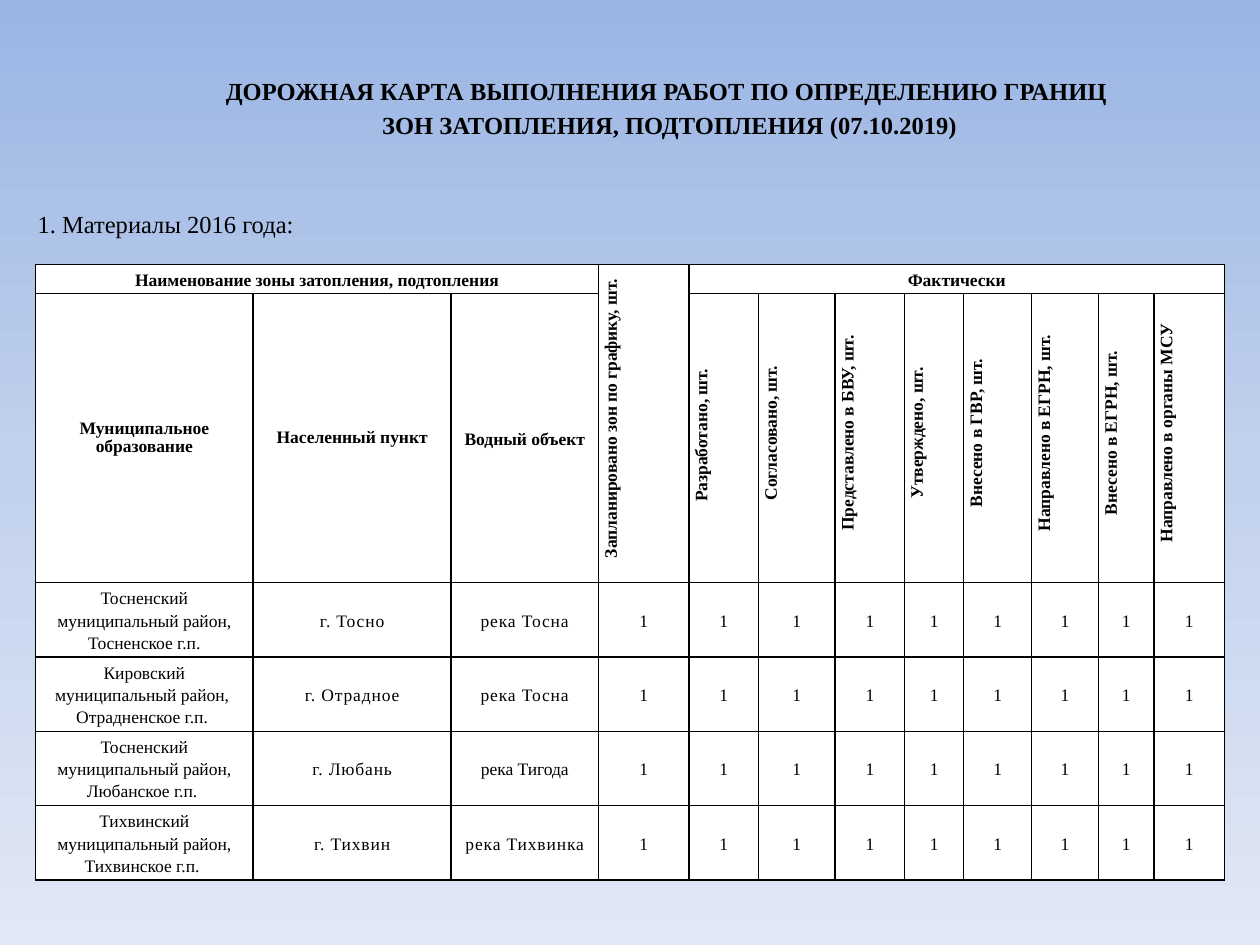
import copy
import dataclasses

import lxml.etree
import pptx
import pptx.dml.color
import pptx.enum.text
import pptx.oxml.ns
import pptx.util

Inches = pptx.util.Inches
Pt = pptx.util.Pt
qn = pptx.oxml.ns.qn
Align = pptx.enum.text.PP_ALIGN
Anchor = pptx.enum.text.MSO_ANCHOR


@dataclasses.dataclass(frozen=True)
class Theme:
    font: str = "Times New Roman"
    ink: str = "000000"
    paper: str = "FFFFFF"
    sky: tuple = ((0, "9AB5E4"), (50, "C2D1ED"), (100, "E1E8F5"))
    heading_size: float = 14
    table_size: float = 10
    border: float = 1
    spacing: float = 1.15
    tight_spacing: float = 0.92
    tracking: float = 0.5


class SlideBuilder:
    def __init__(self, slide, theme):
        self.slide = slide
        self.theme = theme

    def background(self):
        fill = self.slide.background.fill
        fill.gradient()
        fill.gradient_angle = 270
        stops = self.slide.element.find(".//" + qn("a:gsLst"))
        stops.insert(1, copy.deepcopy(stops[0]))
        for stop, (position, color) in zip(stops, self.theme.sky):
            stop.set("pos", str(position * 1000))
            for child in list(stop):
                stop.remove(child)
            lxml.etree.SubElement(stop, qn("a:srgbClr"), val=color)

    def style(self, para, size, bold, align, spacing):
        para.alignment = align
        para.line_spacing = spacing
        para.font.name = self.theme.font
        para.font.size = Pt(size)
        para.font.bold = bold
        para.font.color.rgb = pptx.dml.color.RGBColor.from_string(self.theme.ink)

    def text(self, left, top, width, height, text, bold=False,
             align=Align.LEFT, anchor=Anchor.TOP, spacing=1.0):
        box = self.slide.shapes.add_textbox(
            Inches(left), Inches(top), Inches(width), Inches(height))
        frame = box.text_frame
        frame.word_wrap = True
        frame.vertical_anchor = anchor
        para = frame.paragraphs[0]
        para.text = text
        self.style(para, self.theme.heading_size, bold, align, spacing)

    def table(self, left, top, widths, heights):
        frame = self.slide.shapes.add_table(
            len(heights), len(widths), Inches(left), Inches(top),
            Inches(sum(widths)), Inches(sum(heights)))
        table = frame.table
        table.first_row = False
        table.horz_banding = False
        for column, width in zip(table.columns, widths):
            column.width = Inches(width)
        for row, height in zip(table.rows, heights):
            row.height = Inches(height)
        for cell in table.iter_cells():
            self.cell_frame(cell)
        return table

    def cell_frame(self, cell):
        cell.margin_left = cell.margin_right = Inches(0.06)
        cell.margin_top = cell.margin_bottom = 0
        cell.vertical_anchor = Anchor.MIDDLE
        properties = cell._tc.get_or_add_tcPr()
        for side in ("a:lnL", "a:lnR", "a:lnT", "a:lnB"):
            line = lxml.etree.SubElement(
                properties, qn(side), w=str(Pt(self.theme.border)))
            solid = lxml.etree.SubElement(line, qn("a:solidFill"))
            lxml.etree.SubElement(solid, qn("a:srgbClr"), val=self.theme.ink)
        cell.fill.solid()
        cell.fill.fore_color.rgb = pptx.dml.color.RGBColor.from_string(self.theme.paper)

    def cell(self, cell, text, bold=False, spacing=None, vertical=False, tracked=False):
        cell.text = text
        if vertical:
            cell._tc.get_or_add_tcPr().set("vert", "vert270")
        for para in cell.text_frame.paragraphs:
            self.style(para, self.theme.table_size, bold, Align.CENTER,
                       spacing or self.theme.spacing)
            if vertical:
                para._p.get_or_add_pPr().set("marL", str(Inches(0.08)))
            if tracked:
                for span in para.runs:
                    span._r.get_or_add_rPr().set("spc", str(int(self.theme.tracking * 100)))


COLUMN_WIDTHS = [1.73, 1.57, 1.17, 0.72, 0.55, 0.61, 0.55, 0.47, 0.54, 0.53, 0.44, 0.56]
ROW_HEIGHTS = [0.23, 1.25] + [0.59] * 4
PLANNED_COLUMN = 3
STAGES = [
    "Разработано, шт. ", "Согласовано, шт.", "Представлено в БВУ, шт.",
    "Утверждено, шт.", "Внесено в ГВР, шт.", "Направлено в ЕГРН, шт.",
    "Внесено в ЕГРН, шт.", "Направлено в органы МСУ",
]
ZONES = [
    ("Тосненский муниципальный район, Тосненское г.п.", "г. Тосно", "река Тосна", True),
    ("Кировский муниципальный район, \nОтрадненское г.п. ", "г. Отрадное", "река Тосна", True),
    ("Тосненский муниципальный район,\nЛюбанское г.п. ", "г. Любань", "река Тигода", False),
    ("Тихвинский муниципальный район, Тихвинское г.п. ", "г. Тихвин", "река Тихвинка", True),
]


def fill_header(builder, table):
    last_column = len(COLUMN_WIDTHS) - 1
    first_stage = PLANNED_COLUMN + 1
    table.cell(0, 0).merge(table.cell(0, PLANNED_COLUMN - 1))
    table.cell(0, PLANNED_COLUMN).merge(table.cell(1, PLANNED_COLUMN))
    table.cell(0, first_stage).merge(table.cell(0, last_column))
    builder.cell(table.cell(0, 0), "Наименование зоны затопления, подтопления", bold=True)
    builder.cell(table.cell(0, PLANNED_COLUMN), "Запланировано зон по графику, шт.",
                 bold=True, vertical=True)
    builder.cell(table.cell(0, first_stage), "Фактически", bold=True)
    tight = builder.theme.tight_spacing
    labels = [("Муниципальное образование", tight), ("Населенный пункт", tight),
              ("Водный объект", None)]
    for column, (label, spacing) in enumerate(labels):
        builder.cell(table.cell(1, column), label, bold=True, spacing=spacing)
    for column, stage in enumerate(STAGES, first_stage):
        builder.cell(table.cell(1, column), stage, bold=True, vertical=True)


def fill_zones(builder, table):
    for row, (district, town, river, river_tracked) in enumerate(ZONES, 2):
        builder.cell(table.cell(row, 0), district)
        builder.cell(table.cell(row, 1), town, tracked=True)
        builder.cell(table.cell(row, 2), river, tracked=river_tracked)
        for column in range(PLANNED_COLUMN, len(COLUMN_WIDTHS)):
            builder.cell(table.cell(row, column), "1")


def main():
    deck = pptx.Presentation()
    deck.slide_width = Inches(10)
    deck.slide_height = Inches(7.5)
    page = deck.slides.add_slide(deck.slide_layouts[6])
    builder = SlideBuilder(page, Theme())
    builder.background()
    table = builder.table(0.28, 2.1, COLUMN_WIDTHS, ROW_HEIGHTS)
    fill_header(builder, table)
    fill_zones(builder, table)
    builder.text(
        1.46, 0.52, 7.71, 0.63,
        "ДОРОЖНАЯ КАРТА ВЫПОЛНЕНИЯ РАБОТ ПО ОПРЕДЕЛЕНИЮ ГРАНИЦ \v"
        "ЗОН ЗАТОПЛЕНИЯ, ПОДТОПЛЕНИЯ (07.10.2019)",
        bold=True, align=Align.CENTER, spacing=builder.theme.spacing)
    builder.text(0.2, 1.47, 9.53, 0.47, "1. Материалы 2016 года:", anchor=Anchor.BOTTOM)
    deck.save("out.pptx")


if __name__ == "__main__":
    main()
